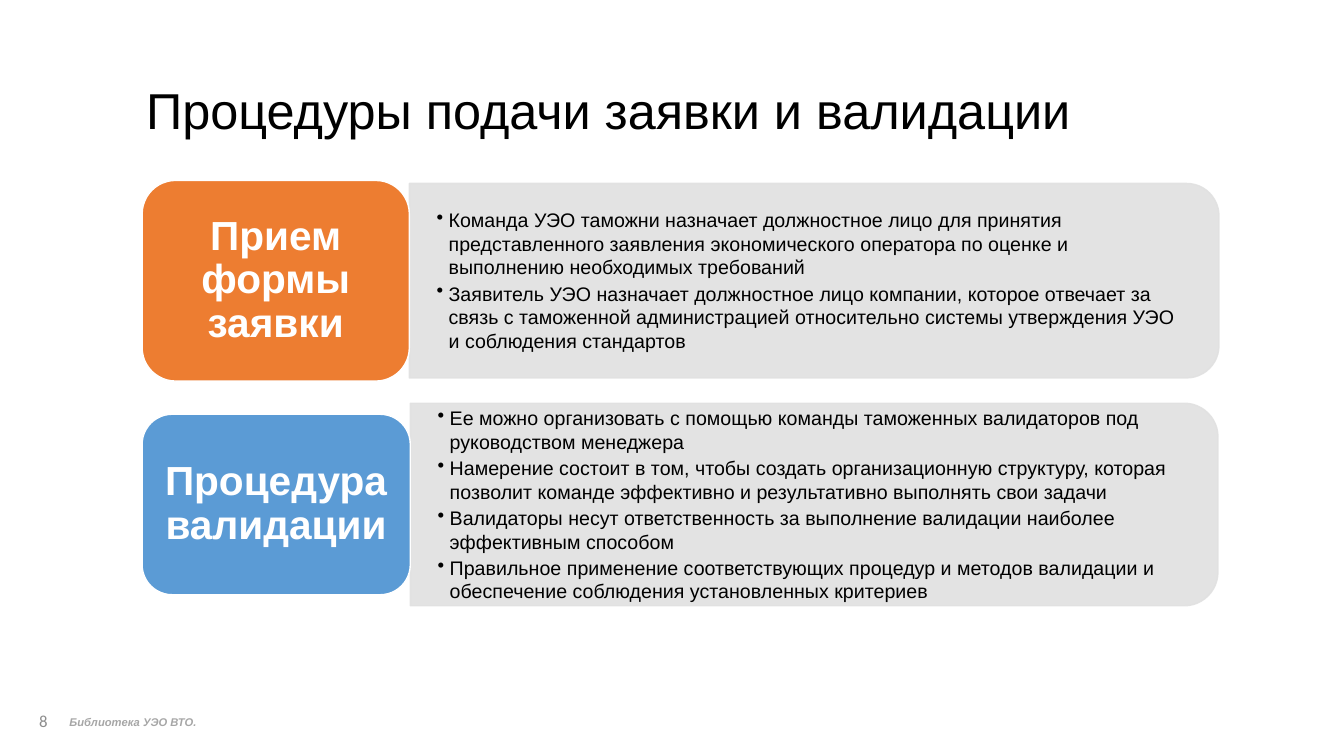
import dataclasses

import pptx
import pptx.dml.color
import pptx.enum.shapes
import pptx.enum.text
import pptx.oxml
import pptx.oxml.ns
import pptx.util

PX = 9144  # 100 px to the inch
SHAPES = pptx.enum.shapes.MSO_SHAPE
ALIGN = pptx.enum.text.PP_ALIGN


@dataclasses.dataclass(frozen=True)
class Theme:
    font: str = "Arial"
    number_font: str = "Calibri"
    ink: str = "000000"
    white: str = "FFFFFF"
    panel: str = "E1E1E1"
    orange: str = "ED7D31"
    blue: str = "5B9BD5"
    number: str = "8C8C8C"
    footer: str = "A6A6A6"
    title_size: int = 36
    label_size: int = 29
    body_size: int = 14
    number_size: int = 12
    footer_size: int = 8


THEME = Theme()

# label, label colour, label box, panel box, text box, bullets
PROCEDURES = [
    ("Прием формы заявки", THEME.orange, (141, 179, 265, 199),
     (406, 182, 803, 193), (406, 191, 793, 174), [
        "Команда УЭО таможни назначает должностное лицо для принятия представленного "
        "заявления экономического оператора по оценке и выполнению необходимых требований",
        "Заявитель УЭО назначает должностное лицо компании, которое отвечает за связь с "
        "таможенной администрацией относительно системы утверждения УЭО и соблюдения "
        "стандартов",
     ]),
    ("Процедура валидации", THEME.blue, (141, 411, 266, 179),
     (407, 400, 801, 201), (407, 410, 791, 181), [
        "Ее можно организовать с помощью команды таможенных валидаторов под руководством "
        "менеджера",
        "Намерение состоит в том, чтобы создать организационную структуру, которая позволит "
        "команде эффективно и результативно выполнять свои задачи",
        "Валидаторы несут ответственность за выполнение валидации наиболее эффективным "
        "способом",
        "Правильное применение соответствующих процедур и методов валидации и обеспечение "
        "соблюдения установленных критериев",
     ]),
]


def emu(box):
    return [pptx.util.Emu(length * PX) for length in box]


def rgb(colour):
    return pptx.dml.color.RGBColor.from_string(colour)


def add_bullet(paragraph, indent):
    properties = paragraph._p.get_or_add_pPr()
    properties.set("marL", str(indent * PX))
    properties.set("indent", str(-indent * PX))
    bullet = pptx.oxml.parse_xml(
        f'<a:buChar {pptx.oxml.ns.nsdecls("a")} char="•"/>')
    properties.append(bullet)


def write(shape, *texts, size, colour, font=THEME.font, bold=False, italic=False,
          align=ALIGN.LEFT, spacing=None, after=0, bullet_indent=0, insets=(10, 5)):
    """Fill the shape with one paragraph per text, centred vertically."""
    frame = shape.text_frame
    frame.word_wrap = True
    frame.auto_size = pptx.enum.text.MSO_AUTO_SIZE.NONE
    frame.vertical_anchor = pptx.enum.text.MSO_ANCHOR.MIDDLE
    frame.margin_left = frame.margin_right = insets[0] * PX
    frame.margin_top = frame.margin_bottom = insets[1] * PX
    for index, text in enumerate(texts):
        paragraph = frame.add_paragraph() if index else frame.paragraphs[0]
        if bullet_indent:
            add_bullet(paragraph, bullet_indent)
        paragraph.alignment = align
        paragraph.space_before = pptx.util.Pt(0)
        paragraph.space_after = pptx.util.Pt(after)
        if spacing:
            paragraph.line_spacing = spacing
        run = paragraph.add_run()
        run.text = text
        run.font.name = font
        run.font.size = pptx.util.Pt(size)
        run.font.bold = bold
        run.font.italic = italic
        run.font.color.rgb = rgb(colour)


def add_block(slide, kind, box, fill, line):
    shape = slide.shapes.add_shape(kind, *emu(box))
    shape.shadow.inherit = False
    shape.fill.solid()
    shape.fill.fore_color.rgb = rgb(fill)
    shape.line.color.rgb = rgb(line)
    shape.line.width = pptx.util.Pt(1)
    return shape


def add_panel(slide, box):
    """Draw a translucent panel whose right corners are rounded."""
    left, top, width, height = box
    shift = (width - height) / 2
    upright = (round(left + shift), round(top - shift), height, width)
    panel = add_block(slide, SHAPES.ROUND_2_SAME_RECTANGLE, upright,
                      THEME.panel, THEME.panel)
    panel.rotation = 90
    for colour in panel._element.spPr.iter(pptx.oxml.ns.qn("a:srgbClr")):
        colour.append(pptx.oxml.parse_xml(
            f'<a:alpha {pptx.oxml.ns.nsdecls("a")} val="90000"/>'))


def add_procedure(slide, label, colour, label_box, panel_box, text_box, bullets):
    add_panel(slide, panel_box)
    write(slide.shapes.add_textbox(*emu(text_box)), *bullets,
          size=THEME.body_size, colour=THEME.ink, after=2,
          bullet_indent=12, insets=(27, 14))
    block = add_block(slide, SHAPES.ROUNDED_RECTANGLE, label_box, colour, THEME.white)
    write(block, label, size=THEME.label_size, colour=THEME.white, bold=True,
          align=ALIGN.CENTER, spacing=0.9, insets=(10, 6))


def add_title(slide, text, box):
    title = slide.shapes.title
    title.left, title.top, title.width, title.height = emu(box)
    write(title, text, size=THEME.title_size, colour=THEME.ink, spacing=0.9)


def add_footer(slide, number, text, box):
    left, top, width, height = box
    number_width = 49
    write(slide.shapes.add_textbox(*emu((left, top, number_width, height))), number,
          size=THEME.number_size, colour=THEME.number, font=THEME.number_font,
          align=ALIGN.RIGHT)
    text_box = (left + number_width + 2, top + 9, width - number_width - 2, 24)
    write(slide.shapes.add_textbox(*emu(text_box)), text,
          size=THEME.footer_size, colour=THEME.footer, bold=True, italic=True)


def main():
    presentation = pptx.Presentation()
    presentation.slide_width, presentation.slide_height = emu((1333, 750))
    slide = presentation.slides.add_slide(presentation.slide_layouts.get_by_name("Title Only"))
    add_title(slide, "Процедуры подачи заявки и валидации", (135, 40, 981, 145))
    for procedure in PROCEDURES:
        add_procedure(slide, *procedure)
    add_footer(slide, "8", "Библиотека УЭО ВТО.", (8, 695, 267, 40))
    presentation.save("out.pptx")


if __name__ == "__main__":
    main()
